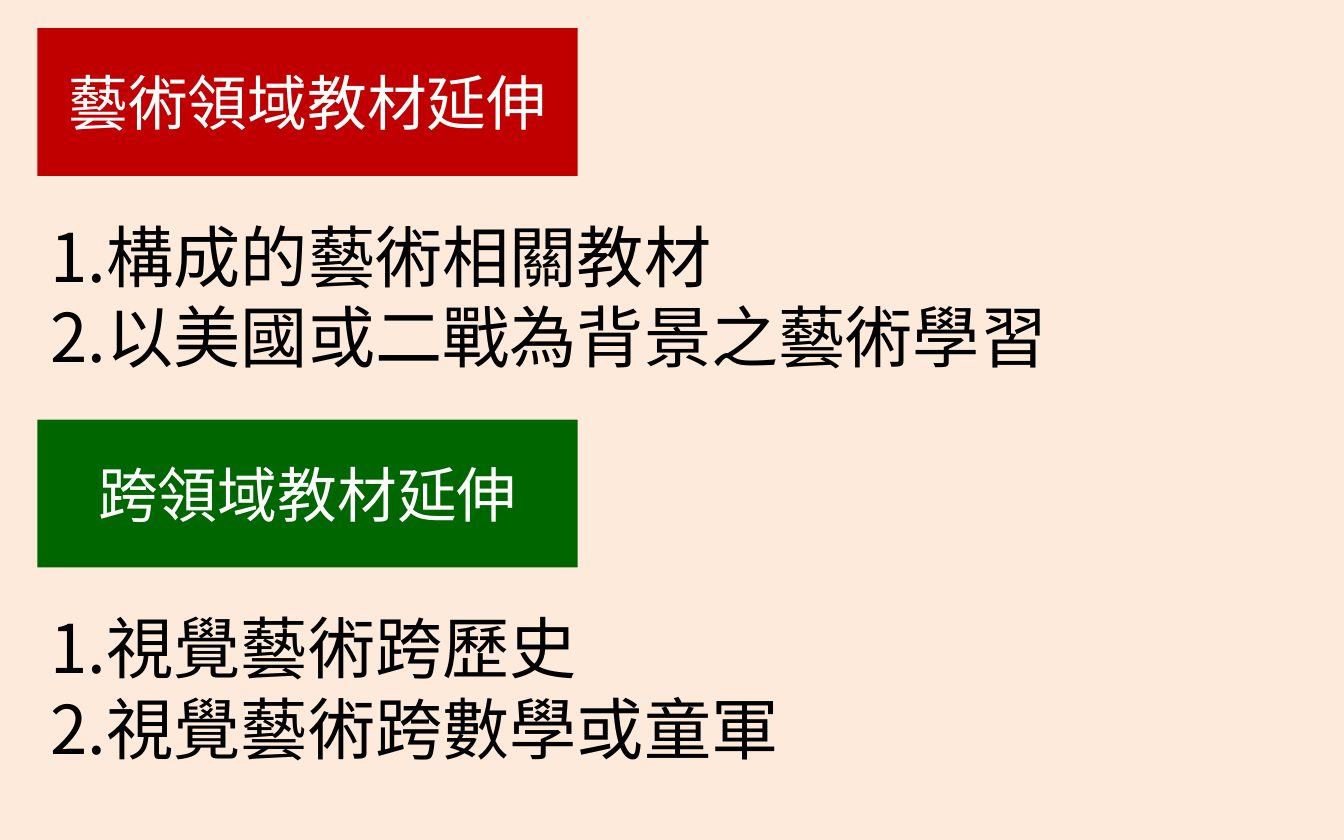
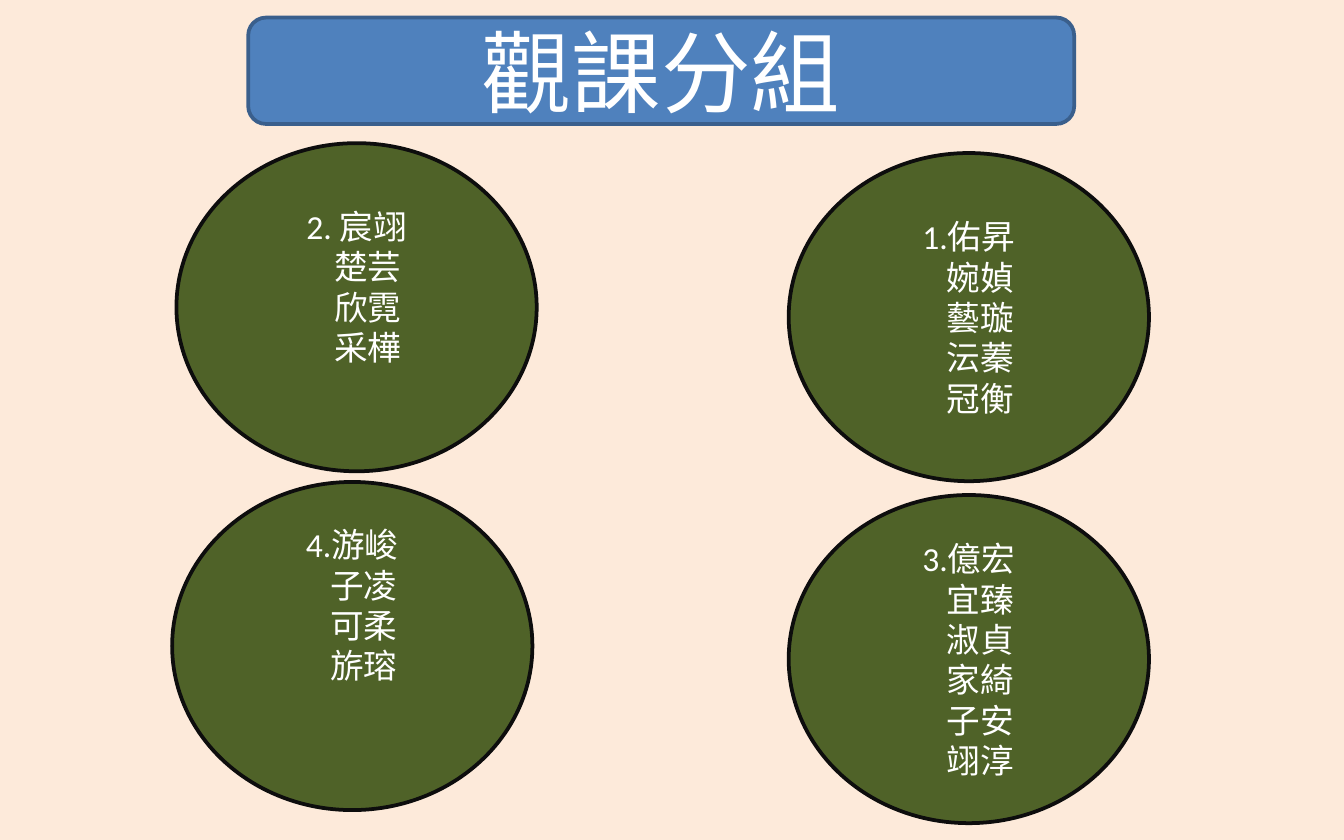
import pptx
import pptx.dml.color
import pptx.enum.shapes
import pptx.enum.text
import pptx.oxml.ns
import pptx.util
from lxml import etree

Pt = pptx.util.Pt
SHAPE = pptx.enum.shapes.MSO_SHAPE
ALIGN = pptx.enum.text.PP_ALIGN

COLORS = {
    "background": "FDEADA",
    "art": "C00000",
    "cross": "006600",
    "title": "4F81BD",
    "title_line": "3A5F8C",
    "group": "4F6228",
    "group_line": "0D0D0D",
    "light": "FFFFFF",
    "dark": "000000",
}
CJK = "Noto Sans CJK SC"
LATIN = "Calibri"
NAME_INDENT = 12.2
NAME_LINE = 22


def rgb(key):
    return pptx.dml.color.RGBColor.from_string(COLORS[key])


def add_slide(prs):
    s = prs.slides.add_slide(prs.slide_layouts[6])
    s.background.fill.solid()
    s.background.fill.fore_color.rgb = rgb("background")
    return s


def add_block(s, kind, box, fill, line=None):
    sp = s.shapes.add_shape(kind, *map(Pt, box))
    sp.shadow.inherit = False
    sp.fill.solid()
    sp.fill.fore_color.rgb = rgb(fill)
    if line:
        sp.line.color.rgb = rgb(line)
        sp.line.width = Pt(2)
    else:
        sp.line.fill.background()
    sp.text_frame.word_wrap = True
    sp.text_frame.vertical_anchor = pptx.enum.text.MSO_ANCHOR.MIDDLE
    return sp


def write(tf, lines, size, color, font=CJK, align=ALIGN.CENTER):
    for i, line in enumerate(lines):
        p = tf.paragraphs[0] if i == 0 else tf.add_paragraph()
        p.alignment = align
        r = p.add_run()
        r.text = line
        r.font.size = Pt(size)
        r.font.name = font
        r.font.color.rgb = rgb(color)
        # East Asian typeface
        ea = etree.SubElement(r.font._element, pptx.oxml.ns.qn("a:ea"))
        ea.set("typeface", CJK)


def add_section(s, box, heading, fill, items):
    """Coloured heading with a numbered list under it."""
    x, y, w, h = box
    sp = add_block(s, SHAPE.RECTANGLE, (x, y, 289.5, 79.2), fill)
    write(sp.text_frame, [heading], 32, "light")

    tb = s.shapes.add_textbox(*map(Pt, (x, y + 96.5, w, h - 96.5)))
    tf = tb.text_frame
    tf.word_wrap = True
    tf.auto_size = pptx.enum.text.MSO_AUTO_SIZE.SHAPE_TO_FIT_TEXT
    numbered = [f"{n}.{item}" for n, item in enumerate(items, 1)]
    write(tf, numbered, 36, "dark", align=ALIGN.LEFT)


def add_title(s, box, text):
    sp = add_block(s, SHAPE.ROUNDED_RECTANGLE, box, "title", "title_line")
    write(sp.text_frame, [text], 48, "light")


def add_group(s, box, names, spare_lines=0):
    """Oval of names; spare lines leave room below the list."""
    sp = add_block(s, SHAPE.OVAL, box, "group", "group_line")
    tf = sp.text_frame
    tf.margin_bottom = Pt(3.6 + spare_lines * NAME_LINE)
    write(tf, names, 18, "light", LATIN)
    # Members are set in from the numbered leader
    for p in tf.paragraphs[1:]:
        p._p.get_or_add_pPr().set("marL", str(Pt(NAME_INDENT)))


def build_extensions(prs):
    s = add_slide(prs)
    sections = [
        ("藝術領域教材延伸", "art", 584,
         ["構成的藝術相關教材", "以美國或二戰為背景之藝術學習"]),
        ("跨領域教材延伸", "cross", 493,
         ["視覺藝術跨歷史", "視覺藝術跨數學或童軍"]),
    ]
    for i, (heading, fill, width, items) in enumerate(sections):
        box = (20, 15.1 + i * 209.7, width, 190.8)
        add_section(s, box, heading, fill, items)


def build_groups(prs):
    s = add_slide(prs)
    add_title(s, (133, 9.4, 442.5, 57), "觀課分組")

    # Position, names and spare lines of each group
    groups = [
        (422.5, 82, ["1.佑昇", "婉媜", "藝璇", "沄蓁", "冠衡"], 0),
        (94.5, 76.7, ["2. 宸翊", "楚芸", "欣霓", "采樺"], 1),
        (422.5, 265.2, ["3.億宏", "宜臻", "淑貞", "家綺", "子安", "翊淳"], 0),
        (92.2, 258.2, ["4.游峻", "子凌", "可柔", "旂瑢"], 2),
    ]
    for x, y, names, spare_lines in groups:
        add_group(s, (x, y, 193, 175.8), names, spare_lines)


def main():
    prs = pptx.Presentation()
    prs.slide_width = Pt(720)
    prs.slide_height = Pt(450)
    build_extensions(prs)
    build_groups(prs)
    prs.save("out.pptx")


if __name__ == "__main__":
    main()
